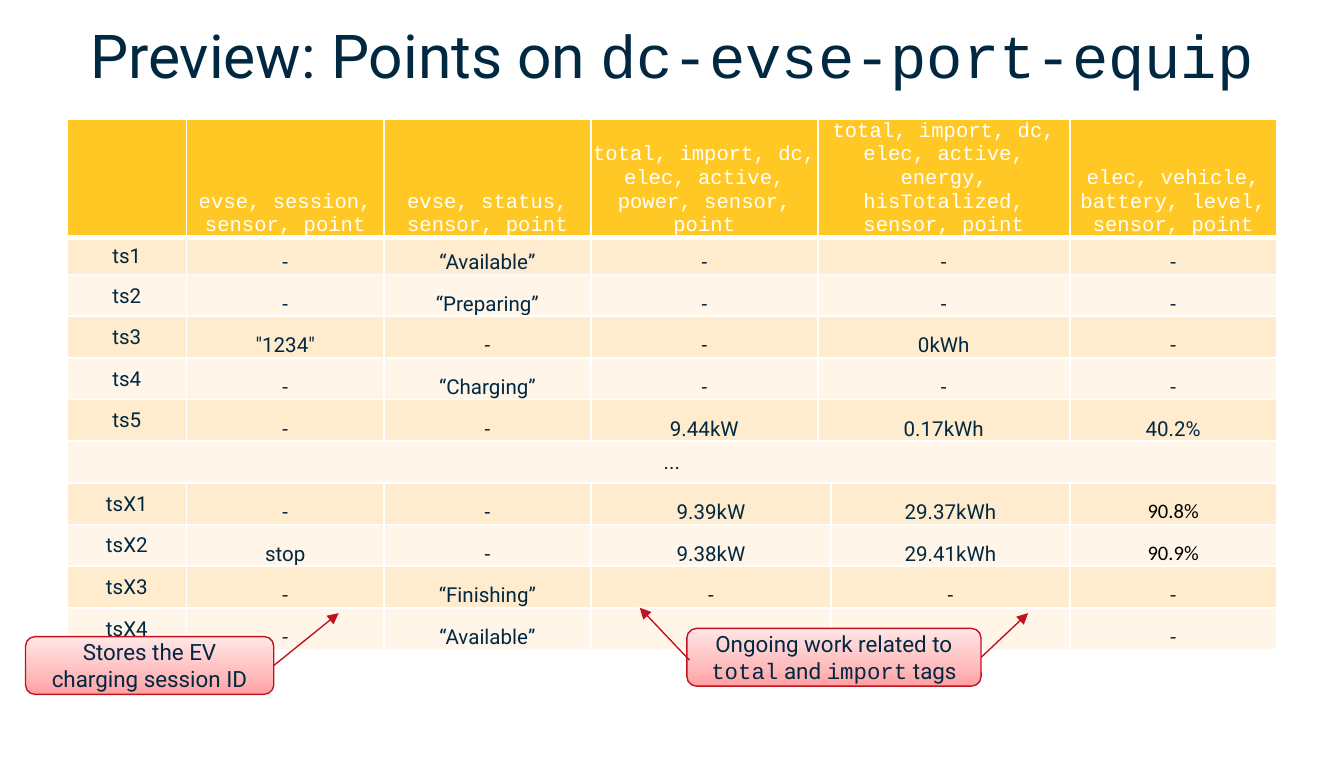
from lxml import etree
from pptx import Presentation
from pptx.dml.color import RGBColor
from pptx.enum import shapes, text
from pptx.oxml import parse_xml
from pptx.oxml.ns import nsdecls, qn
from pptx.util import Pt

NAVY, WHITE, RED = "002841", "FFFFFF", "C0131F"
SANS, MONO = "Roboto", "Courier New"
COLUMNS = [63.9, 105.9, 110.8, 121.6, 7.2, 127.8, 110.8]
ROWS = [53.28, 19.6] + [22.32] * 9
HEADERS = ["", "evse, session, sensor, point", "evse, status, sensor, point",
           "total, import, dc, elec, active, power, sensor, point",
           "total, import, dc, elec, active, energy, hisTotalized, sensor, point",
           "elec, vehicle, battery, level, sensor, point"]
READINGS = [
    ["ts1", "-", "“Available”", "-", "-", "-"],
    ["ts2", "-", "“Preparing”", "-", "-", "-"],
    ["ts3", '"1234"', "-", "-", "0kWh", "-"],
    ["ts4", "-", "“Charging”", "-", "-", "-"],
    ["ts5", "-", "-", "9.44kW", "0.17kWh", "40.2%"],
    ["..."],
    ["tsX1", "-", "-", "9.39kW", "29.37kWh", "90.8%"],
    ["tsX2", "stop", "-", "9.38kW", "29.41kWh", "90.9%"],
    ["tsX3", "-", "“Finishing”", "-", "-", "-"],
    ["tsX4", "-", "“Available”", "-", "-", "-"],
]
GAP_ROW = 6  # the "..." row; the narrow column joins its left neighbour below it


def rgb(value):
    return RGBColor.from_string(value)


def write_runs(p, parts, size, color):
    """Add (text, font) parts to a centred paragraph."""
    p.alignment = text.PP_ALIGN.CENTER
    for words, font in parts:
        r = p.add_run()
        r.text = words
        r.font.size, r.font.name = Pt(size), font
        r.font.color.rgb = rgb(color)


def add_title(slide, box, parts):
    sp = slide.shapes.title
    sp.left, sp.top, sp.width, sp.height = map(Pt, box)
    tf = sp.text_frame
    tf.auto_size = text.MSO_AUTO_SIZE.NONE
    tf.vertical_anchor = text.MSO_ANCHOR.MIDDLE
    write_runs(tf.paragraphs[0], parts, 32.4, NAVY)


def format_cell(cell, fill, bottom):
    """Set white borders, margins and fill."""
    tc_pr = cell._tc.get_or_add_tcPr()
    for side, width in (("L", 1), ("R", 1), ("T", 1), ("B", bottom)):
        tc_pr.append(parse_xml(
            f'<a:ln{side} {nsdecls("a")} w="{Pt(width)}"><a:solidFill>'
            f'<a:srgbClr val="{WHITE}"/></a:solidFill></a:ln{side}>'))
    cell.margin_left = cell.margin_right = cell.margin_top = Pt(0.7)
    cell.margin_bottom = Pt(0)
    cell.fill.solid()
    cell.fill.fore_color.rgb = rgb(fill)


def add_points_table(slide, box):
    table = slide.shapes.add_table(len(ROWS), len(COLUMNS), *map(Pt, box)).table
    for column, width in zip(table.columns, COLUMNS):
        column.width = Pt(width)
    for row, height in zip(table.rows, ROWS):
        row.height = Pt(height)

    for i, values in enumerate([HEADERS] + READINGS):
        header = i == 0
        fill = "FFC824" if header else "FFEBCD" if i % 2 else "FFF5E8"
        for cell in table.rows[i].cells:
            format_cell(cell, fill, 3 if header else 1)

        # Merged cells
        if i == GAP_ROW:
            first, last = 0, 6
        elif i < GAP_ROW:
            first, last = 4, 5
        else:
            first, last = 3, 4
        table.cell(i, first).merge(table.cell(i, last))

        # Text
        visible = [c for c in table.rows[i].cells if not c.is_spanned]
        for j, (cell, value) in enumerate(zip(visible, values)):
            middle = j == 0 and not header
            cell.vertical_anchor = (text.MSO_ANCHOR.MIDDLE if middle
                                    else text.MSO_ANCHOR.BOTTOM)
            font, color = (MONO, WHITE) if header else (SANS, NAVY)
            if value in ("90.8%", "90.9%"):
                font, color = "Calibri", "000000"
            if value:
                write_runs(cell.text_frame.paragraphs[0], [(value, font)], 11, color)


def add_callout(slide, box, parts):
    sp = slide.shapes.add_shape(shapes.MSO_SHAPE.ROUNDED_RECTANGLE, *map(Pt, box))
    sp.shadow.inherit = False
    sp.line.color.rgb, sp.line.width = rgb(RED), Pt(0.75)

    # Gradient from pink at the bottom to pale at the top
    stops = "".join(
        f'<a:gs pos="{pos * 1000}"><a:srgbClr val="{color}"/></a:gs>'
        for pos, color in ((0, "FFA0A2"), (35, "FFBCBD"), (100, "FFE6E6")))
    sp._element.spPr.find(qn("a:prstGeom")).addnext(parse_xml(
        f'<a:gradFill {nsdecls("a")} rotWithShape="1"><a:gsLst>{stops}</a:gsLst>'
        '<a:lin ang="16200000" scaled="0"/></a:gradFill>'))

    tf = sp.text_frame
    tf.word_wrap = True
    tf.vertical_anchor = text.MSO_ANCHOR.MIDDLE
    write_runs(tf.paragraphs[0], parts, 12, NAVY)
    return sp


def add_arrow(slide, start, end, callout=None):
    """Draw an arrow, joined to the right side of a callout if one is given."""
    line = slide.shapes.add_connector(
        shapes.MSO_CONNECTOR.STRAIGHT, *map(Pt, start + end))
    if callout is not None:
        line.begin_connect(callout, 3)
    line.line.color.rgb, line.line.width = rgb(RED), Pt(0.75)
    etree.SubElement(line.line._get_or_add_ln(), qn("a:tailEnd"), type="triangle")
    etree.SubElement(line._element.spPr, qn("a:effectLst"))


def main():
    prs = Presentation()
    prs.slide_width, prs.slide_height = Pt(720), Pt(405.36)
    slide = prs.slides.add_slide(prs.slide_layouts[5])

    add_title(slide, (13.68, 7.92, 692.64, 42.48),
              [("Preview: Points on ", SANS), ("dc-evse-port-equip", MONO)])
    add_points_table(slide, (36, 63.6, 648, 273.6))

    # Callouts
    tags = add_callout(slide, (368, 336.5, 157.6, 30.96),
                       [("Ongoing work related to ", SANS), ("total", MONO),
                        (" and ", SANS), ("import", MONO), (" tags", SANS)])
    session = add_callout(slide, (13.68, 340.9, 133, 30.96),
                          [("Stores the EV charging session ID", SANS)])

    # Arrows into the table
    add_arrow(slide, (146.68, 356.4), (181.44, 328.32), session)
    add_arrow(slide, (525.6, 352), (550.8, 328.32), tags)
    add_arrow(slide, (369.36, 353.52), (342.72, 325.44))

    prs.save("out.pptx")


if __name__ == "__main__":
    main()
